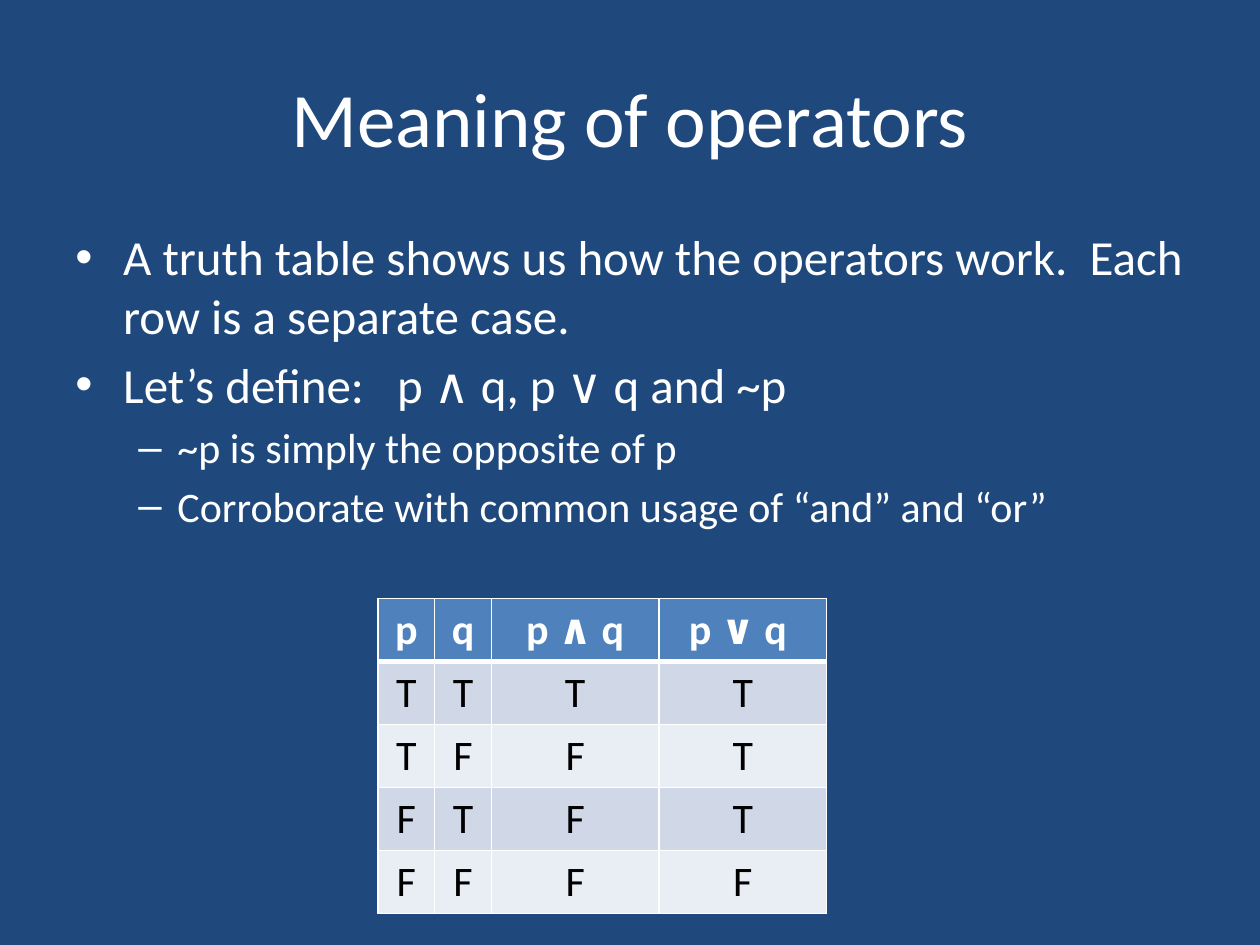
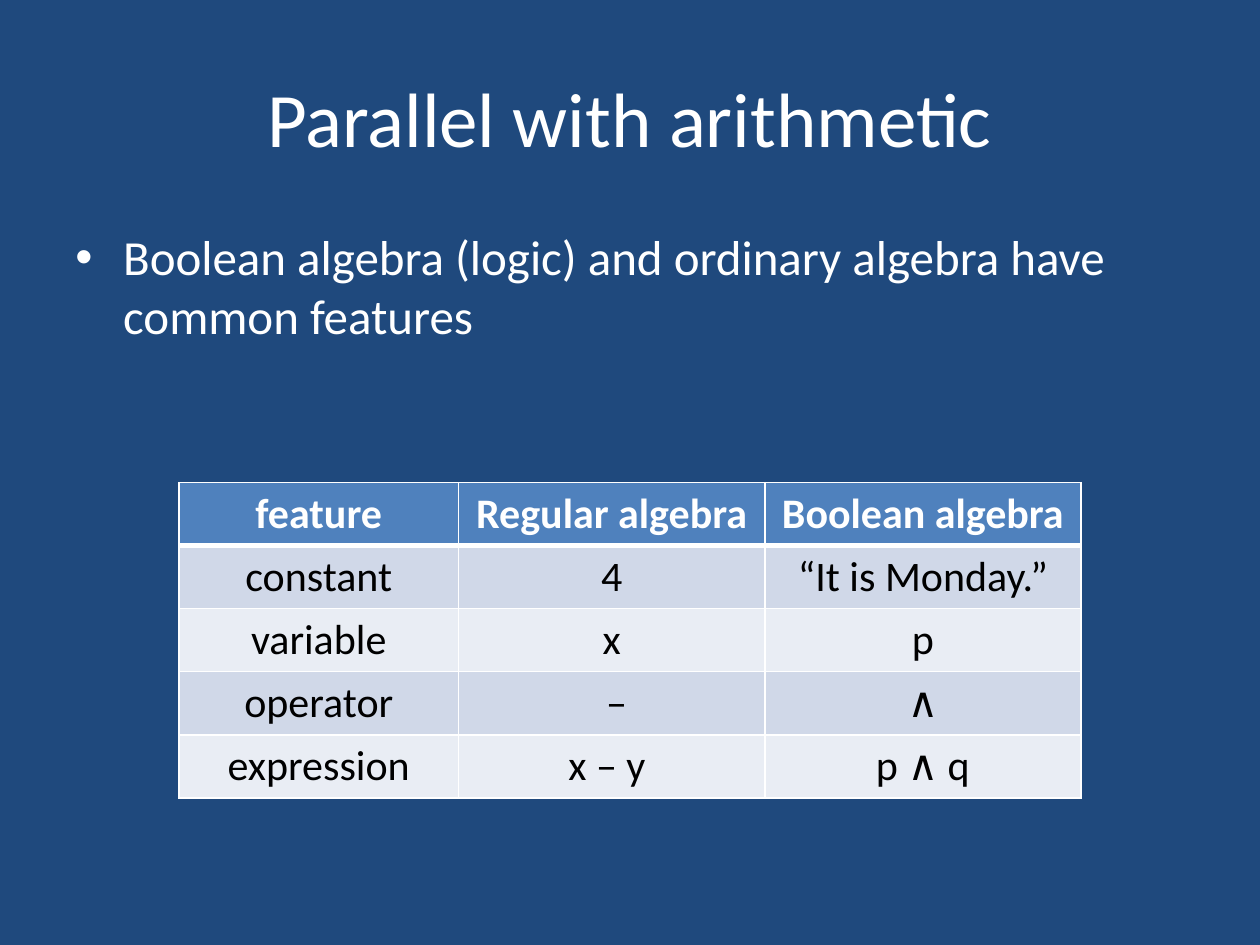
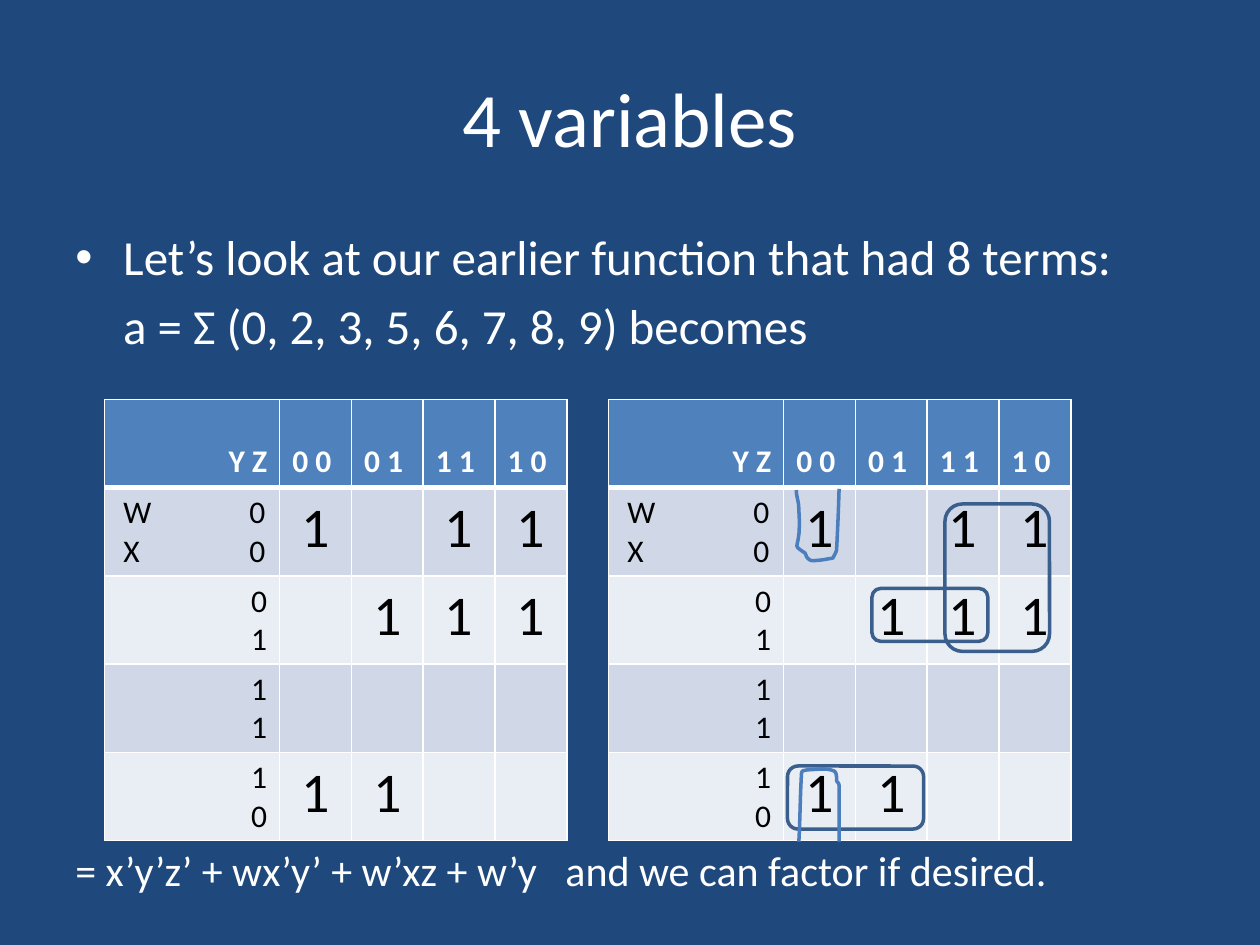
from pptx import Presentation
from pptx.dml.color import RGBColor
from pptx.enum.shapes import MSO_SHAPE
from pptx.enum.text import MSO_ANCHOR, PP_ALIGN
from pptx.oxml.xmlchemy import OxmlElement
from pptx.util import Inches, Pt

FONT = "Calibri"
BACKGROUND, WHITE, BLACK = "1F497D", "FFFFFF", "000000"
HEADER, BANDS = "4F81BD", ("D0D8E8", "E9EDF4")
LOOP, INK = "3A5F8C", "4B7EBC"

TITLE_AREA = (0.5, 0.3, 9, 1.25)
BODY_AREA = (0.5, 1.75, 9, 4.95)
TALL_BODY_AREA = (0.5, 1.75, 9, 5.75)

STYLES = {
    "bullet": dict(size=28, left=0.38, hang=0.38, bullet="•"),
    "dash": dict(size=24, left=0.81, hang=0.31, bullet="–"),
    "continued": dict(size=28, left=0.38),
    "result": dict(size=24, before=280),
}

OPERATORS_BODY = [
    ("bullet", "A truth table shows us how the operators work.  Each row is a separate case."),
    ("bullet", "Let’s define:   p ∧ q, p ∨ q and ~p"),
    ("dash", "~p is simply the opposite of p"),
    ("dash", "Corroborate with common usage of “and” and “or”"),
]
TRUTH_COLUMNS = [0.45, 0.45, 1.33, 1.33]
TRUTH_ROWS = [
    ["p", "q", "p ∧ q", "p ∨ q "],
    ["T", "T", "T", "T"],
    ["T", "F", "F", "T"],
    ["F", "T", "F", "T"],
    ["F", "F", "F", "F"],
]

ARITHMETIC_BODY = [
    ("bullet", "Boolean algebra (logic) and ordinary algebra have common features"),
]
FEATURE_COLUMNS = [2.22, 2.43, 2.51]
FEATURE_ROWS = [
    ["feature", "Regular algebra", "Boolean algebra"],
    ["constant", "4", "“It is Monday.”"],
    ["variable", "x", "p"],
    ["operator", " –", "∧"],
    ["expression", "x – y ", "p ∧ q"],
]

VARIABLES_BODY = [
    ("bullet", "Let’s look at our earlier function that had 8 terms:"),
    ("continued", "a = Σ (0, 2, 3, 5, 6, 7, 8, 9) becomes"),
    ("result", "= x’y’z’ + wx’y’ + w’xz + w’y   and we can factor if desired."),
]
MAP_COLUMNS = [1.39] + [0.57] * 4
MAP_ROWS = [
    ["Y Z", "0 0", "0 1", "1 1", "1 0"],
    ["W\t0\nX\t0", "1", "", "1", "1"],
    ["0\n1", "", "1", "1", "1"],
    ["1\n1", "", "", "", ""],
    ["1\n0", "1", "1", "", ""],
]
MAP_LEFTS = (0.83, 4.83)
MAP_LOOPS = [(7.5, 4, 0.83, 1.17), (6.25, 6.08, 1.08, 0.5), (6.92, 4.67, 0.92, 0.42)]
MAP_STROKES = [
    [(6.34, 6.68),
     [(6.35, 6.51), (6.35, 6.33), (6.36, 6.16)],
     [(6.36, 6.11), (6.37, 6.12), (6.41, 6.11)],
     [(6.48, 6.11), (6.55, 6.09), (6.62, 6.12)],
     [(6.64, 6.13), (6.64, 6.17), (6.64, 6.2)],
     [(6.65, 6.21), (6.66, 6.22), (6.66, 6.24)],
     [(6.66, 6.4), (6.66, 6.5), (6.66, 6.68)]],
    [(6.32, 3.89),
     [(6.32, 3.94), (6.34, 3.98), (6.34, 4.03)],
     [(6.37, 4.4), (6.26, 4.3), (6.39, 4.39)],
     [(6.4, 4.41), (6.4, 4.42), (6.41, 4.43)],
     [(6.42, 4.44), (6.43, 4.45), (6.45, 4.45)],
     [(6.5, 4.45), (6.55, 4.44), (6.61, 4.43)],
     [(6.62, 4.41), (6.64, 4.38), (6.64, 4.36)],
     [(6.65, 4.2), (6.66, 3.88), (6.66, 3.88)]],
]


def color(value):
    return RGBColor.from_string(value)


def add_run(paragraph, text, size, font_color=WHITE, bold=False):
    run = paragraph.add_run()
    run.text = text
    run.font.name = FONT
    run.font.size = Pt(size)
    run.font.bold = bold
    run.font.color.rgb = color(font_color)


def add_element(parent, tag, **attributes):
    element = OxmlElement(tag)
    for name, value in attributes.items():
        element.set(name, str(value))
    parent.append(element)
    return element


def add_text_frame(slide, area):
    frame = slide.shapes.add_textbox(*map(Inches, area)).text_frame
    frame.word_wrap = True
    return frame


def next_paragraph(frame, index):
    return frame.add_paragraph() if index else frame.paragraphs[0]


def add_body(slide, items, area):
    frame = add_text_frame(slide, area)
    for index, (style_name, text) in enumerate(items):
        style = STYLES[style_name]
        paragraph = next_paragraph(frame, index)
        paragraph.space_before = Pt(style.get("before", style["size"] * 0.2))
        properties = paragraph._p.get_or_add_pPr()
        properties.set("marL", str(Inches(style.get("left", 0))))
        properties.set("indent", str(-Inches(style.get("hang", 0))))
        if "bullet" in style:
            properties.set("lvl", "1" if style_name == "dash" else "0")
            add_element(properties, "a:buFont", typeface="Arial")
            add_element(properties, "a:buChar", char=style["bullet"])
        add_run(paragraph, text, style["size"])


def add_slide(presentation, title, body, area=BODY_AREA):
    slide = presentation.slides.add_slide(presentation.slide_layouts[6])
    slide.background.fill.solid()
    slide.background.fill.fore_color.rgb = color(BACKGROUND)
    frame = add_text_frame(slide, TITLE_AREA)
    frame.vertical_anchor = MSO_ANCHOR.MIDDLE
    frame.paragraphs[0].alignment = PP_ALIGN.CENTER
    add_run(frame.paragraphs[0], title, 44)
    add_body(slide, body, area)
    return slide


def style_cell(cell, row):
    properties = cell._tc.get_or_add_tcPr()
    widths = {"L": 1, "R": 1, "T": 3 if row == 1 else 1, "B": 1 if row else 3}
    for side, width in widths.items():
        line = add_element(properties, f"a:ln{side}", w=Pt(width))
        add_element(add_element(line, "a:solidFill"), "a:srgbClr", val=WHITE)
    cell.fill.solid()
    cell.fill.fore_color.rgb = color(BANDS[(row - 1) % 2] if row else HEADER)


def centered_style(row, column):
    return 24, PP_ALIGN.CENTER


def map_style(row, column):
    if column == 0:
        return 18, PP_ALIGN.RIGHT
    return (32, PP_ALIGN.CENTER) if row else (18, PP_ALIGN.LEFT)


def add_grid(slide, left, top, columns, row_height, rows, text_style=centered_style):
    size = (sum(columns), row_height * len(rows))
    frame = slide.shapes.add_table(len(rows), len(columns), *map(Inches, (left, top, *size)))
    table = frame.table
    table.horz_banding = False
    for column, width in zip(table.columns, columns):
        column.width = Inches(width)
    for row, texts in enumerate(rows):
        table.rows[row].height = Inches(row_height)
        for column, text in enumerate(texts):
            cell = table.cell(row, column)
            style_cell(cell, row)
            if text:
                fill_cell(cell, text, row, *text_style(row, column))
    return table


def fill_cell(cell, text, row, size, alignment):
    for index, line in enumerate(text.split("\n")):
        paragraph = next_paragraph(cell.text_frame, index)
        paragraph.alignment = alignment
        add_run(paragraph, line, size, BLACK if row else WHITE, not row)


def add_map(slide, left):
    table = add_grid(slide, left, 3.17, MAP_COLUMNS, 0.7, MAP_ROWS, map_style)
    for column in range(len(MAP_COLUMNS)):
        table.cell(0, column).vertical_anchor = MSO_ANCHOR.BOTTOM
    label = table.cell(1, 0)
    label.margin_left = Inches(0.15)
    for paragraph in label.text_frame.paragraphs:
        paragraph.alignment = PP_ALIGN.LEFT
        stops = add_element(paragraph._p.get_or_add_pPr(), "a:tabLst")
        add_element(stops, "a:tab", pos=Inches(1), algn="l")


def outline(shape, line_color):
    shape.shadow.inherit = False
    shape.fill.background()
    shape.line.color.rgb = color(line_color)
    shape.line.width = Pt(2)


def curve_points(start, controls, steps=8):
    points = (start, *controls)
    for step in range(1, steps + 1):
        t = step / steps
        weights = ((1 - t) ** 3, 3 * t * (1 - t) ** 2, 3 * t * t * (1 - t), t ** 3)
        yield tuple(
            Inches(sum(weight * point[axis] for weight, point in zip(weights, points)))
            for axis in (0, 1)
        )


def add_stroke(slide, start, *curves):
    builder = slide.shapes.build_freeform(*map(Inches, start))
    for controls in curves:
        builder.add_line_segments(curve_points(start, controls), close=False)
        start = controls[-1]
    outline(builder.convert_to_shape(), INK)


def main():
    presentation = Presentation()
    presentation.slide_width = Inches(10)
    presentation.slide_height = Inches(7.5)

    slide = add_slide(presentation, "Meaning of operators", OPERATORS_BODY)
    add_grid(slide, 3, 4.75, TRUTH_COLUMNS, 0.5, TRUTH_ROWS)

    slide = add_slide(presentation, "Parallel with arithmetic", ARITHMETIC_BODY)
    add_grid(slide, 1.42, 3.83, FEATURE_COLUMNS, 0.5, FEATURE_ROWS)

    slide = add_slide(presentation, "4 variables", VARIABLES_BODY, TALL_BODY_AREA)
    for left in MAP_LEFTS:
        add_map(slide, left)
    for area in MAP_LOOPS:
        outline(slide.shapes.add_shape(MSO_SHAPE.ROUNDED_RECTANGLE, *map(Inches, area)), LOOP)
    for stroke in MAP_STROKES:
        add_stroke(slide, *stroke)

    presentation.save("out.pptx")


if __name__ == "__main__":
    main()
